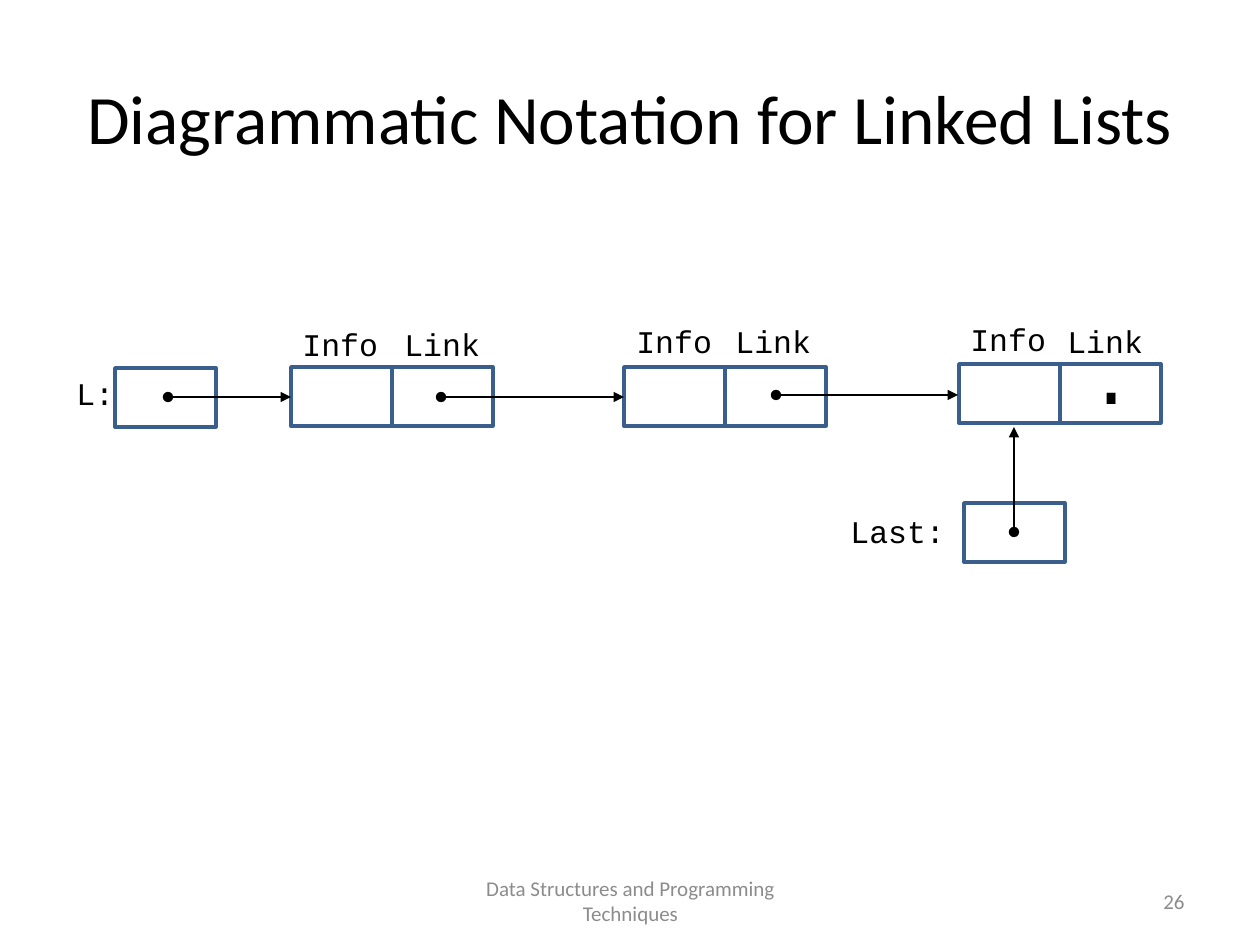
from dataclasses import dataclass

from lxml import etree
from pptx import Presentation
from pptx.dml.color import RGBColor
from pptx.enum.shapes import MSO_CONNECTOR, MSO_SHAPE
from pptx.enum.text import MSO_ANCHOR, PP_ALIGN
from pptx.oxml.ns import qn
from pptx.util import Emu, Pt

RECTANGLE = MSO_SHAPE.RECTANGLE
STRAIGHT = MSO_CONNECTOR.STRAIGHT
TOP, MIDDLE = MSO_ANCHOR.TOP, MSO_ANCHOR.MIDDLE
LEFT, CENTER, RIGHT = PP_ALIGN.LEFT, PP_ALIGN.CENTER, PP_ALIGN.RIGHT

PX_PER_INCH = 126
CELL_W, CELL_H = 101, 59
LABEL_W, LABEL_H = 140, 50


@dataclass(frozen=True)
class Theme:
    ink: RGBColor = RGBColor(0x00, 0x00, 0x00)
    cell_line: RGBColor = RGBColor(0x3A, 0x5F, 0x8C)
    muted: RGBColor = RGBColor(0x8C, 0x8C, 0x8C)
    heading_font: str = "Calibri"
    code_font: str = "Courier New"
    title_size: float = 39.6
    code_size: int = 18
    null_size: int = 44
    footer_size: int = 12
    cell_weight: int = 2
    arrow_weight: int = 1


THEME = Theme()


def px(length):
    return Emu(round(length * 914400 / PX_PER_INCH))


def add_text(slide, box, text, font_name, size, color, align=LEFT, anchor=TOP):
    frame = slide.shapes.add_textbox(*map(px, box)).text_frame
    frame.word_wrap = True
    frame.vertical_anchor = anchor
    paragraph = frame.paragraphs[0]
    paragraph.text = text
    paragraph.alignment = align
    paragraph.font.name = font_name
    paragraph.font.size = Pt(size)
    paragraph.font.color.rgb = color


def add_code(slide, box, text, size=THEME.code_size):
    add_text(slide, box, text, THEME.code_font, size, THEME.ink)


def add_cell(slide, left, top):
    cell = slide.shapes.add_shape(RECTANGLE, *map(px, (left, top, CELL_W, CELL_H)))
    cell.shadow.inherit = False
    cell.fill.background()
    cell.line.color.rgb = THEME.cell_line
    cell.line.width = Pt(THEME.cell_weight)


def add_pointer(slide, start, end):
    """Draw a line with a dot at its start and an arrowhead at its end."""
    pointer = slide.shapes.add_connector(STRAIGHT, *map(px, (*start, *end)))
    pointer.line.color.rgb = THEME.ink
    pointer.line.width = Pt(THEME.arrow_weight)
    line = pointer.line._get_or_add_ln()
    for tag, ending in (("a:headEnd", "oval"), ("a:tailEnd", "triangle")):
        etree.SubElement(line, qn(tag), type=ending)
    etree.SubElement(pointer._element.spPr, qn("a:effectLst"))


def add_node(slide, left, top, info_offset, link_offset):
    """Draw an Info and a Link cell, with labels offset from the node's corner."""
    for column in range(2):
        add_cell(slide, left + column * CELL_W, top)
    for text, (dx, dy) in (("Info", info_offset), ("Link", link_offset)):
        add_code(slide, (left + dx, top + dy, LABEL_W, LABEL_H), text)


def add_variable(slide, left, top, name, label_box):
    """Draw a pointer variable's cell, with its name offset from the cell's corner."""
    dx, dy, width, height = label_box
    add_cell(slide, left, top)
    add_code(slide, (left + dx, top + dy, width, height), name)


def add_linked_list(slide, left, top):
    nodes = (
        (176, 3, (-1, -48), (101, -48)),
        (509, 3, (0, -51), (99, -51)),
        (844, 0, (-1, -50), (96, -48)),
    )
    variables = (
        (0, 4, "L:", (-51, 0, 90, LABEL_H)),
        (849, 139, "Last:", (-126, 3, 126, LABEL_H)),
    )
    pointers = (
        ((53, 33), (176, 33)),
        ((326, 33), (509, 33)),
        ((661, 31), (843, 31)),
        ((899, 168), (899, 63)),
    )
    for dx, dy, info_offset, link_offset in nodes:
        add_node(slide, left + dx, top + dy, info_offset, link_offset)
    for dx, dy, name, label_box in variables:
        add_variable(slide, left + dx, top + dy, name, label_box)
    for start, end in pointers:
        add_pointer(slide, *((left + x, top + y) for x, y in (start, end)))
    add_code(slide, (left + 961, top - 43, 126, 106), ".", THEME.null_size)


def add_title(slide, box):
    add_text(slide, box, "Diagrammatic Notation for Linked Lists", THEME.heading_font,
             THEME.title_size, THEME.ink, CENTER, MIDDLE)


def add_footer(slide, left, top, height):
    parts = (
        (0, 399, "Data Structures and Programming Techniques", CENTER),
        (472, 294, "26", RIGHT),
    )
    for dx, width, text, align in parts:
        add_text(slide, (left + dx, top, width, height), text, THEME.heading_font,
                 THEME.footer_size, THEME.muted, align, MIDDLE)


def main():
    presentation = Presentation()
    presentation.slide_width, presentation.slide_height = px(1260), px(945)
    slide = presentation.slides.add_slide(presentation.slide_layouts[6])
    add_title(slide, (63, 38, 1134, 158))
    add_linked_list(slide, 115, 364)
    add_footer(slide, 431, 876, 50)
    presentation.save("out.pptx")


if __name__ == "__main__":
    main()
